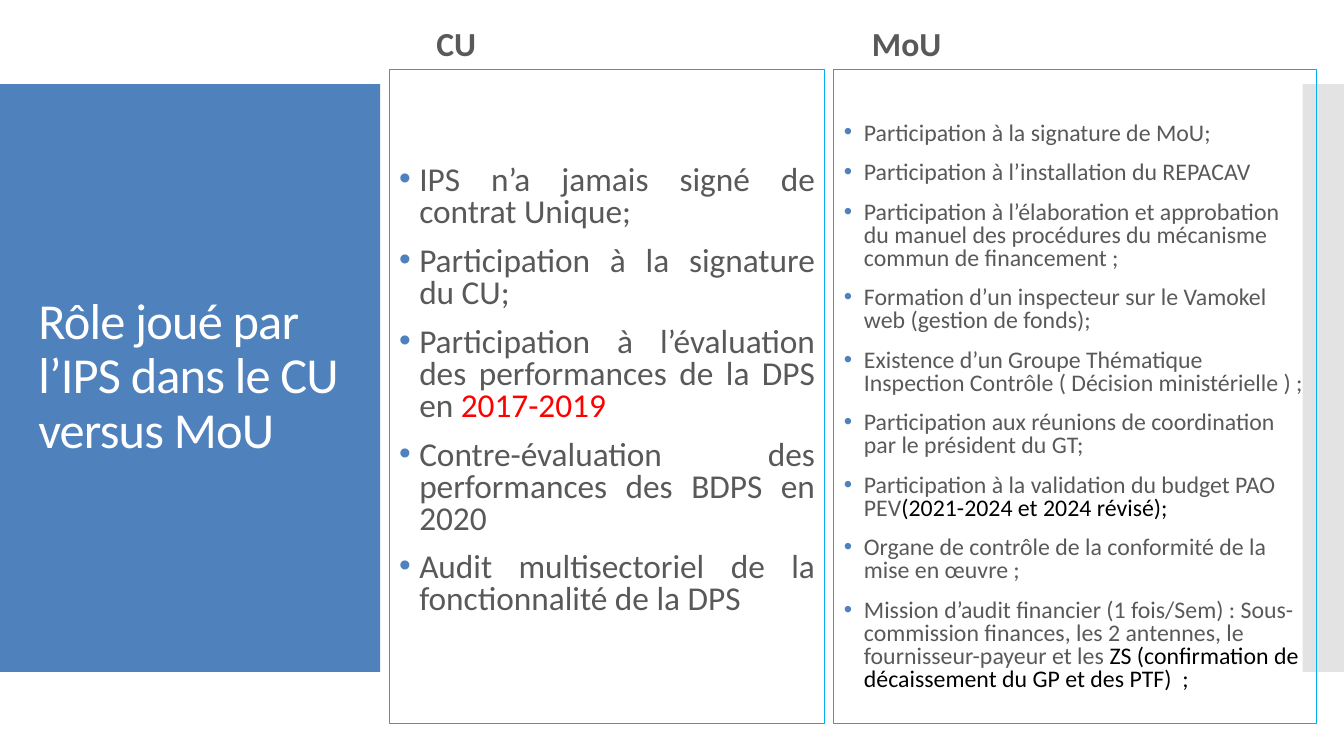
import pptx
import pptx.util
import pptx.dml.color
import pptx.enum.shapes
import pptx.enum.text
import pptx.oxml.ns
from lxml import etree

Inches, Pt = pptx.util.Inches, pptx.util.Pt
ALIGN = pptx.enum.text.PP_ALIGN
ANCHOR = pptx.enum.text.MSO_ANCHOR
RECT = pptx.enum.shapes.MSO_SHAPE.RECTANGLE
qn = pptx.oxml.ns.qn
BLUE, GREY, BLACK, RED = "4F81BD", "595959", "000000", "FF0000"


def rgb(code):
    return pptx.dml.color.RGBColor.from_string(code)


def style(par, size, color, line, bold=False):
    par.font.name, par.font.size, par.font.bold = "Calibri", Pt(size), bold
    par.font.color.rgb = rgb(color)
    par.line_spacing = line


deck = pptx.Presentation()
deck.slide_width, deck.slide_height = Inches(13.33), Inches(7.5)
slide = deck.slides.add_slide(deck.slide_layouts[5])
shapes = slide.shapes

# Side bands
top, tall = deck.slide_height // 9, deck.slide_height * 7 // 9
for left, wide, color in ((0, 3.77, BLUE), (12.92, 0.41, "C8C8C8")):
    band = shapes.add_shape(RECT, Inches(left), top, Inches(wide), tall)
    band.shadow.inherit = False
    band.fill.solid()
    band.fill.fore_color.rgb = rgb(color)
    band.line.fill.background()
# The right band is half transparent
tint = band.fill._xPr.find(qn("a:solidFill"))[0]
etree.SubElement(tint, qn("a:alpha"), val="50000")

# Title, placed in front of the blue band
title = shapes.title
shapes._spTree.append(title._element)
title.left, title.top = Inches(0.28), Inches(1.23)
title.width, title.height = Inches(3.22), Inches(5.03)
frame = title.text_frame
frame.text = "Rôle joué par l’IPS dans le CU versus MoU"
frame.word_wrap = True
frame.auto_size = pptx.enum.text.MSO_AUTO_SIZE.NONE
frame.vertical_anchor = ANCHOR.MIDDLE
par = frame.paragraphs[0]
par.alignment = ALIGN.LEFT
style(par, 36, "FFFFFF", 0.9)
par.runs[0].font._element.set("spc", "-60")

# Points of each column: (text, ending, colour of the ending)
unique = [
    ("IPS n’a jamais signé de contrat Unique;",),
    ("Participation à la signature du CU;",),
    ("Participation à l’évaluation des performances de la DPS en ", "2017-2019", RED),
    ("Contre-évaluation des performances des BDPS en 2020",),
    ("Audit multisectoriel de la fonctionnalité de la DPS",),
]
memo = [
    ("Participation à la signature de MoU;",),
    ("Participation à l’installation du REPACAV",),
    ("Participation à l’élaboration et approbation du manuel des procédures "
     "du mécanisme commun de financement ;",),
    ("Formation d’un inspecteur sur le Vamokel web (gestion de fonds);",),
    ("Existence d’un Groupe Thématique Inspection Contrôle "
     "( Décision ministérielle ) ;",),
    ("Participation aux réunions de coordination par le président du GT;",),
    ("Participation à la validation du budget PAO PEV",
     "(2021-2024 et 2024 révisé);", BLACK),
    ("Organe de contrôle de la conformité de la mise en œuvre ;",),
    ("Mission d’audit financier (1 fois/Sem) : Sous-commission finances, "
     "les 2 antennes, le fournisseur-payeur et les ",
     "ZS (confirmation de décaissement du GP et des PTF)  ;", BLACK),
]

# Columns: heading, heading left, box left, box width, top inset, size, alignment
columns = [
    ("CU", 4.23, 3.86, 4.32, 0.96, 23.8, ALIGN.JUSTIFY, unique),
    ("MoU", 8.55, 8.27, 4.79, 0.53, 17, ALIGN.LEFT, memo),
]
for head, start, left, wide, inset, size, align, points in columns:
    label = shapes.add_textbox(Inches(start), Inches(0.2), Inches(3.8), Inches(0.48))
    frame = label.text_frame
    frame.word_wrap = True
    frame.vertical_anchor = ANCHOR.BOTTOM
    frame.text = head
    style(frame.paragraphs[0], 24, GREY, 0.9, True)

    box = shapes.add_shape(RECT, Inches(left), Inches(0.69), Inches(wide), Inches(6.49))
    box.shadow.inherit = False
    box.fill.background()
    box.line.color.rgb = rgb("00B0F0")
    box.line.width = Pt(0.75)
    frame = box.text_frame
    frame.word_wrap = True
    frame.vertical_anchor = ANCHOR.TOP
    frame.margin_top = Inches(inset)

    for row, (text, *end) in enumerate(points):
        par = frame.add_paragraph() if row else frame.paragraphs[0]
        par.alignment = align
        par.space_before = Pt(12 if row else 0)
        style(par, size, GREY, 0.8)
        par.add_run().text = text
        if end:
            run = par.add_run()
            run.text = end[0]
            run.font.color.rgb = rgb(end[1])
        # Hanging bullet
        props = par._p.get_or_add_pPr()
        props.set("marL", str(Inches(0.2)))
        props.set("indent", str(-Inches(0.2)))
        tone = etree.Element(qn("a:buClr"))
        etree.SubElement(tone, qn("a:srgbClr"), val=BLUE)
        face = etree.Element(qn("a:buFont"), typeface="Arial")
        mark = etree.Element(qn("a:buChar"), char="•")
        for part in (tone, face, mark):
            props.find(qn("a:defRPr")).addprevious(part)

deck.save("out.pptx")
